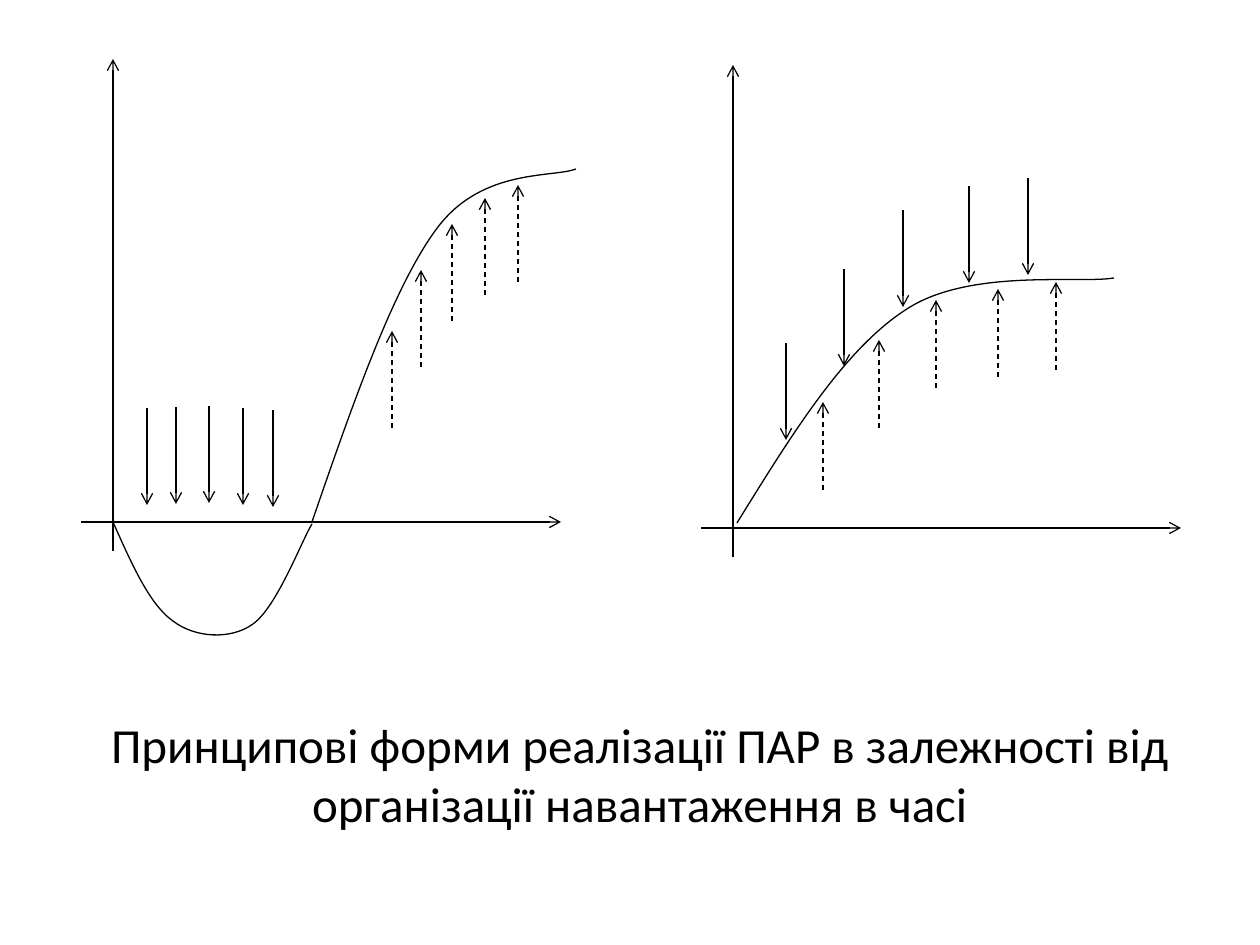
from lxml.etree import SubElement
from pptx import Presentation
from pptx.dml.color import RGBColor
from pptx.enum.dml import MSO_LINE
from pptx.enum.shapes import MSO_CONNECTOR
from pptx.enum.text import MSO_AUTO_SIZE, PP_ALIGN
from pptx.oxml.ns import qn
from pptx.util import Emu, Pt

PX = 914400 / 126
THEME = {
    "ink": RGBColor(0, 0, 0),
    "line": Pt(0.75),
    "font": {"name": "Calibri", "size": Pt(28)},
}


def px(value):
    return Emu(round(value * PX))


def add_arrow(shapes, start, tip, dashed=False):
    arrow = shapes.add_connector(MSO_CONNECTOR.STRAIGHT, *map(px, start + tip))
    arrow.line.color.rgb = THEME["ink"]
    arrow.line.width = THEME["line"]
    if dashed:
        arrow.line.dash_style = MSO_LINE.DASH
    SubElement(arrow.line._get_or_add_ln(), qn("a:tailEnd"), type="arrow")
    SubElement(arrow._element.spPr, qn("a:effectLst"))


presentation = Presentation()
presentation.slide_width, presentation.slide_height = px(1260), px(945)
slide = presentation.slides.add_slide(presentation.slide_layouts[6])

# Each graph: axis origin, load arrows (x, tip y) pointing down,
# response arrows pointing up, and curves made of cubic Bézier points
graphs = [
    {
        "origin": (733, 528),
        "loads": [(786, 440), (844, 366), (903, 307), (969, 283), (1028, 275)],
        "responses": [(823, 402), (879, 340), (936, 300), (998, 289), (1056, 282)],
        "response_length": 88,
        "curves": [
            [(737, 523), (791, 436), (844, 349), (907, 309),
             (970, 268), (1080, 284), (1114, 278)],
        ],
    },
    {
        "origin": (113, 522),
        "loads": [(147, 505), (176, 504), (209, 503), (243, 505), (273, 507)],
        "responses": [(392, 331), (421, 270), (452, 224), (485, 198), (518, 185)],
        "response_length": 97,
        "curves": [
            [(312, 522), (353, 403), (394, 285), (438, 227),
             (483, 168), (553, 178), (576, 169)],
            [(113, 522), (131, 562), (149, 604), (173, 621), (195, 638),
             (231, 640), (253, 624), (277, 607), (302, 540), (312, 524)],
        ],
    },
]
LOAD_LENGTH = 97

for graph in graphs:
    shapes = slide.shapes.add_group_shape().shapes

    # Axes
    x, y = graph["origin"]
    add_arrow(shapes, (x, y + 29), (x, y - 463))
    add_arrow(shapes, (x - 32, y), (x + 448, y))

    # Load and response arrows
    for x, tip in graph["loads"]:
        add_arrow(shapes, (x, tip - LOAD_LENGTH), (x, tip))
    for x, tip in graph["responses"]:
        add_arrow(shapes, (x, tip + graph["response_length"]), (x, tip), dashed=True)

    # Curves: each three straight segments become one Bézier segment
    for start, *points in graph["curves"]:
        builder = shapes.build_freeform(*start, scale=PX)
        builder.add_line_segments(points, close=False)
        curve = builder.convert_to_shape()
        curve.shadow.inherit = False
        curve.fill.background()
        curve.line.color.rgb = THEME["ink"]
        curve.line.width = THEME["line"]
        outline = next(curve._element.iter(qn("a:path")))
        segments = outline.findall(qn("a:lnTo"))
        for first in range(0, len(segments), 3):
            bezier = SubElement(outline, qn("a:cubicBezTo"))
            for segment in segments[first:first + 3]:
                bezier.append(segment[0])
                outline.remove(segment)

# Caption
caption = slide.shapes.add_textbox(px(88), px(708), px(1103), px(131))
frame = caption.text_frame
frame.word_wrap = True
frame.auto_size = MSO_AUTO_SIZE.SHAPE_TO_FIT_TEXT
paragraph = frame.paragraphs[0]
paragraph.text = ("Принципові форми реалізації ПАР в залежності від "
                  "організації навантаження в часі")
paragraph.alignment = PP_ALIGN.CENTER
for attribute, value in THEME["font"].items():
    setattr(paragraph.font, attribute, value)
paragraph.font.color.rgb = THEME["ink"]

presentation.save("out.pptx")
